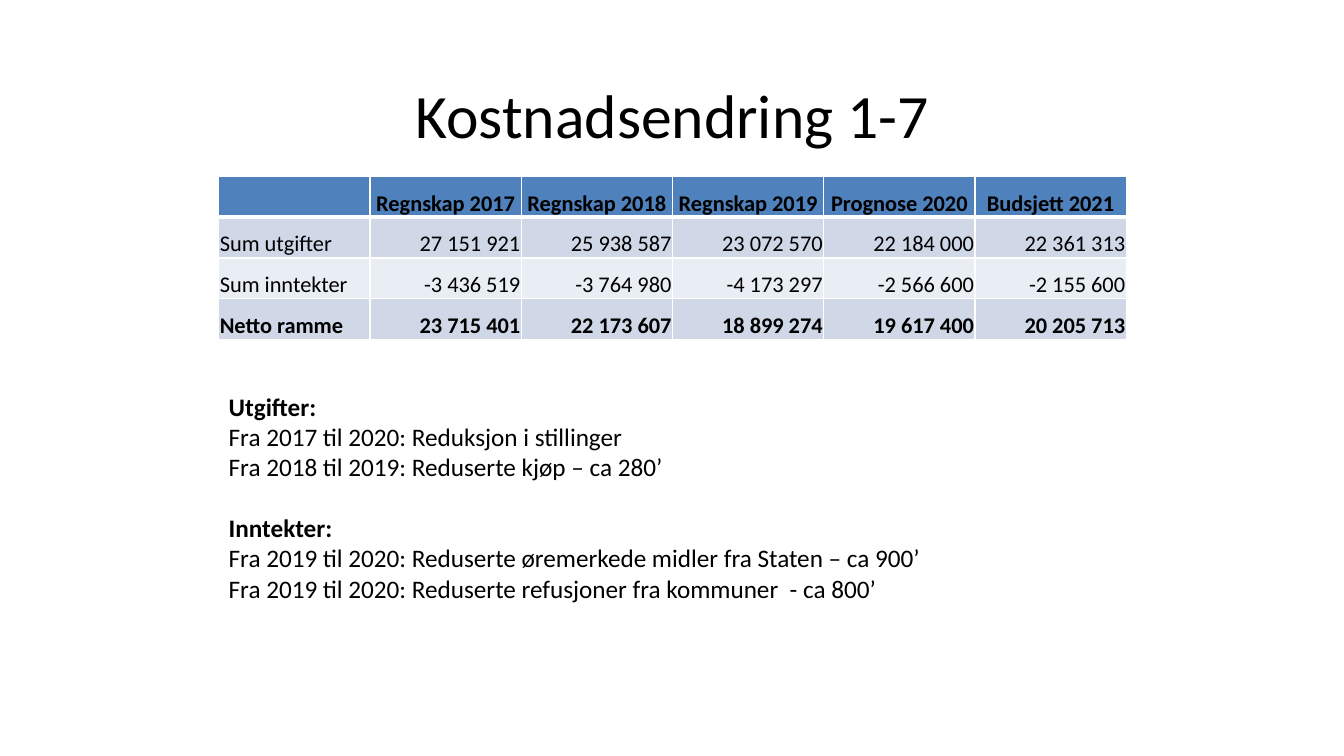
from dataclasses import dataclass
from typing import Any

from lxml.etree import SubElement
from pptx import Presentation
from pptx.dml.color import RGBColor
from pptx.enum.text import MSO_ANCHOR, PP_ALIGN
from pptx.oxml.ns import qn
from pptx.util import Inches, Pt


@dataclass(frozen=True)
class Theme:
    font: str = "Calibri"
    ink: str = "000000"
    border: str = "FFFFFF"
    header: str = "4F81BD"
    bands: tuple[str, str] = ("D0D8E8", "E9EDF4")
    title_size: int = 44
    cell_size: int = 16
    note_size: int = 18
    thin: int = 1
    thick: int = 3


@dataclass(frozen=True)
class BudgetRow:
    label: str
    amounts: tuple[str, ...]
    bold: bool = False


@dataclass(frozen=True)
class Line:
    text: str
    size: int
    bold: bool = False
    align: PP_ALIGN = PP_ALIGN.LEFT
    gap: int = 0


@dataclass(frozen=True)
class TextBlock:
    box: tuple[float, float, float, float]
    lines: tuple[Line, ...]
    anchor: MSO_ANCHOR = MSO_ANCHOR.TOP


THEME = Theme()
LEFT = 2.17
TABLE_TOP = 1.75
COLUMN_WIDTH = 1.5
ROW_HEIGHT = 0.405
CELL_FORMAT = {
    "vertical_anchor": MSO_ANCHOR.BOTTOM,
    "margin_left": Inches(0.01),
    "margin_right": Inches(0.01),
    "margin_top": Inches(0.01),
    "margin_bottom": Inches(0),
}

BUDGET = (
    BudgetRow("", ("Regnskap 2017", "Regnskap 2018", "Regnskap 2019",
                   "Prognose 2020", "Budsjett 2021"), True),
    BudgetRow("Sum utgifter", ("27 151 921", "25 938 587", "23 072 570",
                               "22 184 000", "22 361 313")),
    BudgetRow("Sum inntekter", ("-3 436 519", "-3 764 980", "-4 173 297",
                                "-2 566 600", "-2 155 600")),
    BudgetRow("Netto ramme", ("23 715 401", "22 173 607", "18 899 274",
                              "19 617 400", "20 205 713"), True),
)

HEADING = TextBlock(
    (LEFT, 0.5, 9, 1.25),
    (Line("Kostnadsendring 1-7", THEME.title_size, align=PP_ALIGN.CENTER),),
    MSO_ANCHOR.MIDDLE,
)
EXPLANATION = TextBlock(
    (LEFT, 3.83, 7.4, 2.22),
    (
        Line("Utgifter:", THEME.note_size, True),
        Line("Fra 2017 til 2020: Reduksjon i stillinger", THEME.note_size),
        Line("Fra 2018 til 2019: Reduserte kjøp – ca 280’", THEME.note_size),
        Line("Inntekter:", THEME.note_size, True, gap=22),
        Line("Fra 2019 til 2020: Reduserte øremerkede midler fra Staten – ca 900’",
             THEME.note_size),
        Line("Fra 2019 til 2020: Reduserte refusjoner fra kommuner  - ca 800’",
             THEME.note_size),
    ),
)


def apply_format(target: Any, values: dict[str, Any]) -> None:
    for name, value in values.items():
        setattr(target, name, value)


def write_line(paragraph: Any, line: Line) -> None:
    apply_format(paragraph, {"alignment": line.align, "space_before": Pt(line.gap)})
    font = paragraph.font
    if line.text:
        run = paragraph.add_run()
        run.text = line.text
        font = run.font
    apply_format(font, {"name": THEME.font, "size": Pt(line.size), "bold": line.bold})
    font.color.rgb = RGBColor.from_string(THEME.ink)


def draw_text(slide: Any, block: TextBlock) -> None:
    frame = slide.shapes.add_textbox(*map(Inches, block.box)).text_frame
    apply_format(frame, {"word_wrap": True, "vertical_anchor": block.anchor})
    for index, line in enumerate(block.lines):
        paragraph = frame.add_paragraph() if index else frame.paragraphs[0]
        write_line(paragraph, line)


def draw_borders(cell: Any, row_index: int) -> None:
    properties = cell._tc.get_or_add_tcPr()
    widths = {
        "a:lnL": THEME.thin,
        "a:lnR": THEME.thin,
        "a:lnT": THEME.thick if row_index == 1 else THEME.thin,
        "a:lnB": THEME.thick if row_index == 0 else THEME.thin,
    }
    for tag, width in widths.items():
        edge = SubElement(properties, qn(tag), w=str(Pt(width)))
        fill = SubElement(edge, qn("a:solidFill"))
        SubElement(fill, qn("a:srgbClr"), val=THEME.border)


def draw_cell(cell: Any, line: Line, row_index: int) -> None:
    apply_format(cell, CELL_FORMAT)
    write_line(cell.text_frame.paragraphs[0], line)
    draw_borders(cell, row_index)
    color = THEME.bands[(row_index - 1) % 2] if row_index else THEME.header
    cell.fill.solid()
    cell.fill.fore_color.rgb = RGBColor.from_string(color)


def draw_budget(slide: Any, rows: tuple[BudgetRow, ...]) -> None:
    columns = len(rows[0].amounts) + 1
    table = slide.shapes.add_table(
        len(rows), columns, Inches(LEFT), Inches(TABLE_TOP),
        Inches(columns * COLUMN_WIDTH), Inches(len(rows) * ROW_HEIGHT),
    ).table
    for row_index, row in enumerate(rows):
        amount_align = PP_ALIGN.RIGHT if row_index else PP_ALIGN.CENTER
        for column_index, text in enumerate((row.label, *row.amounts)):
            align = amount_align if column_index else PP_ALIGN.LEFT
            line = Line(text, THEME.cell_size, row.bold, align)
            draw_cell(table.cell(row_index, column_index), line, row_index)


def main() -> None:
    presentation = Presentation()
    apply_format(presentation, {"slide_width": Inches(13.33), "slide_height": Inches(7.5)})
    slide = presentation.slides.add_slide(presentation.slide_layouts[6])
    draw_text(slide, HEADING)
    draw_budget(slide, BUDGET)
    draw_text(slide, EXPLANATION)
    presentation.save("out.pptx")


if __name__ == "__main__":
    main()
